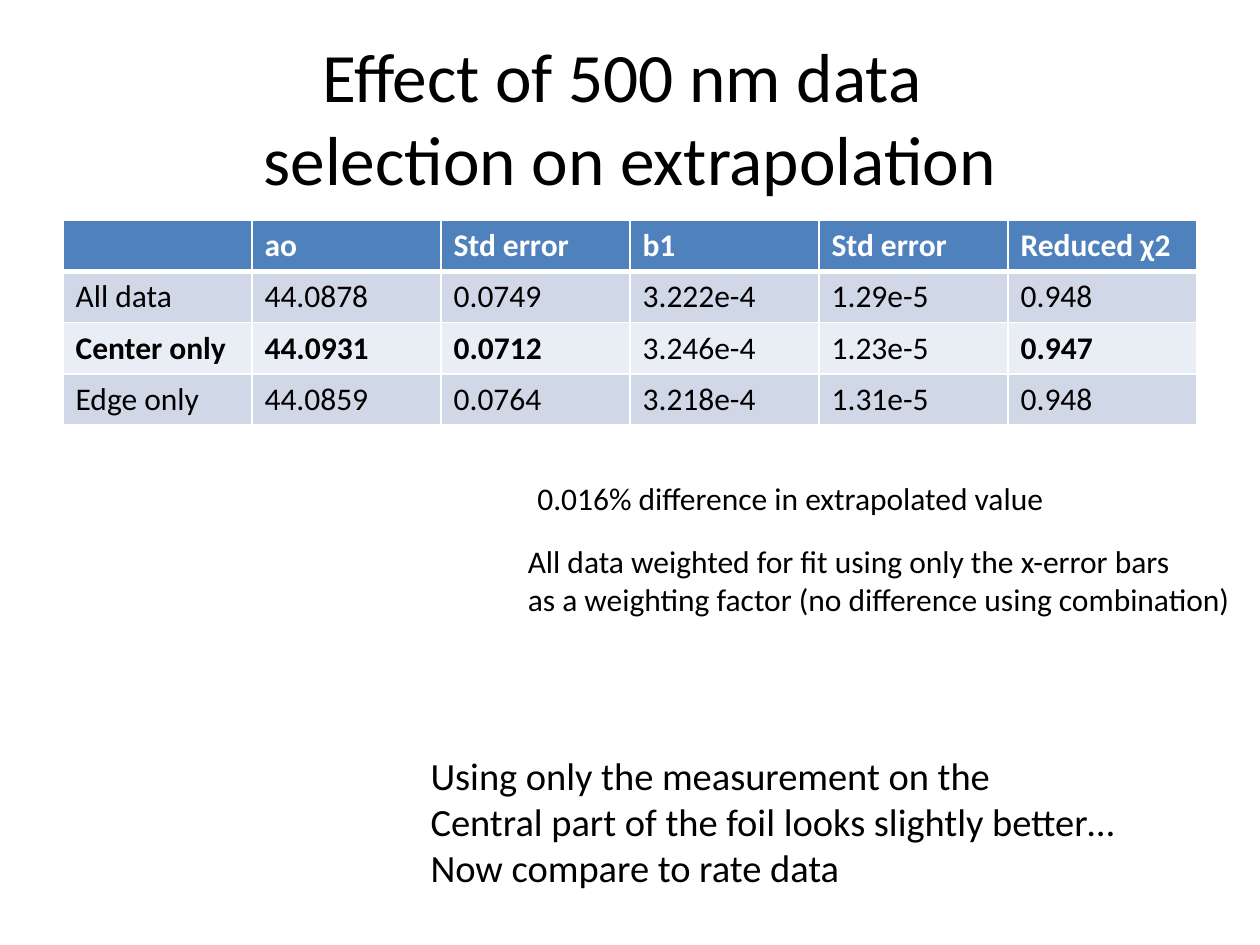
import dataclasses

import lxml.etree
import pptx
import pptx.dml.color
import pptx.enum.text
import pptx.oxml.ns
import pptx.util

Pt = pptx.util.Pt
FONT = "Calibri"
BLACK, WHITE = "000000", "FFFFFF"
HEADER_FILL = "4F81BD"
BAND_FILLS = ("D0D8E8", "E9EDF4")


@dataclasses.dataclass(frozen=True)
class Note:
    left: float
    top: float
    width: float
    height: float
    size: float
    lines: tuple[str, ...]


@dataclasses.dataclass(frozen=True)
class ResultRow:
    values: tuple[str, ...]
    fill: str
    color: str = BLACK
    bold_columns: tuple[int, ...] = ()


NOTES = (
    Note(300, 270, 307.5, 29, 18, ("0.016% difference in extrapolated value",)),
    Note(294.5, 306, 425.5, 51, 18, (
        "All data weighted for fit using only the x-error bars",
        "as a weighting factor (no difference using combination)",
    )),
    Note(239, 426, 420.5, 87, 22, (
        "Using only the measurement on the",
        "Central part of the foil looks slightly better…",
        "Now compare to rate data",
    )),
)
RESULTS = (
    ResultRow(("", "ao", "Std error", "b1", "Std error", "Reduced χ2"),
              HEADER_FILL, WHITE, tuple(range(6))),
    ResultRow(("All data", "44.0878", "0.0749", "3.222e-4", "1.29e-5", "0.948"),
              BAND_FILLS[0]),
    ResultRow(("Center only", "44.0931", "0.0712", "3.246e-4", "1.23e-5", "0.947"),
              BAND_FILLS[1], bold_columns=(0, 1, 2, 5)),
    ResultRow(("Edge only", "44.0859", "0.0764", "3.218e-4", "1.31e-5", "0.948"),
              BAND_FILLS[0]),
)


def rgb(hex_color: str) -> pptx.dml.color.RGBColor:
    return pptx.dml.color.RGBColor.from_string(hex_color)


def add_run(paragraph, text: str, size: float, color: str = BLACK, bold: bool = False) -> None:
    run = paragraph.add_run()
    run.text = text
    run.font.name = FONT
    run.font.size = Pt(size)
    run.font.bold = bold
    run.font.color.rgb = rgb(color)


def add_title(slide, lines: tuple[str, ...]) -> None:
    frame = slide.shapes.add_textbox(Pt(36), Pt(21.6), Pt(648), Pt(90)).text_frame
    frame.word_wrap = True
    frame.vertical_anchor = pptx.enum.text.MSO_ANCHOR.MIDDLE
    heading = frame.paragraphs[0]
    heading.alignment = pptx.enum.text.PP_ALIGN.CENTER
    for index, line in enumerate(lines):
        if index:
            heading.add_line_break()
        add_run(heading, line, 39.6)


def add_note(slide, note: Note) -> None:
    frame = slide.shapes.add_textbox(
        Pt(note.left), Pt(note.top), Pt(note.width), Pt(note.height)).text_frame
    frame.word_wrap = False
    frame.auto_size = pptx.enum.text.MSO_AUTO_SIZE.SHAPE_TO_FIT_TEXT
    for index, line in enumerate(note.lines):
        paragraph = frame.add_paragraph() if index else frame.paragraphs[0]
        add_run(paragraph, line, note.size)


def set_borders(cell, top: float, bottom: float) -> None:
    qn = pptx.oxml.ns.qn
    properties = cell._tc.get_or_add_tcPr()
    widths = {"a:lnL": 1, "a:lnR": 1, "a:lnT": top, "a:lnB": bottom}
    for position, (side, width) in enumerate(widths.items()):
        border = lxml.etree.Element(qn(side), w=str(Pt(width)))
        fill = lxml.etree.SubElement(border, qn("a:solidFill"))
        lxml.etree.SubElement(fill, qn("a:srgbClr"), val=WHITE)
        properties.insert(position, border)


def add_results(slide, rows: tuple[ResultRow, ...]) -> None:
    column_count = len(rows[0].values)
    results = slide.shapes.add_table(
        len(rows), column_count, Pt(36), Pt(126), Pt(648), Pt(29.2 * len(rows))).table
    for row_index, row in enumerate(rows):
        top = 3 if row_index == 1 else 1
        bottom = 3 if row_index == 0 else 1
        for column, value in enumerate(row.values):
            cell = results.cell(row_index, column)
            cell.fill.solid()
            cell.fill.fore_color.rgb = rgb(row.fill)
            set_borders(cell, top, bottom)
            if value:
                add_run(cell.text_frame.paragraphs[0], value, 18, row.color,
                        column in row.bold_columns)


def main() -> None:
    deck = pptx.Presentation()
    deck.slide_width, deck.slide_height = Pt(720), Pt(540)
    slide = deck.slides.add_slide(deck.slide_layouts[6])
    add_title(slide, ("Effect of 500 nm data ", "selection on extrapolation"))
    for note in NOTES:
        add_note(slide, note)
    add_results(slide, RESULTS)
    deck.save("out.pptx")


if __name__ == "__main__":
    main()
